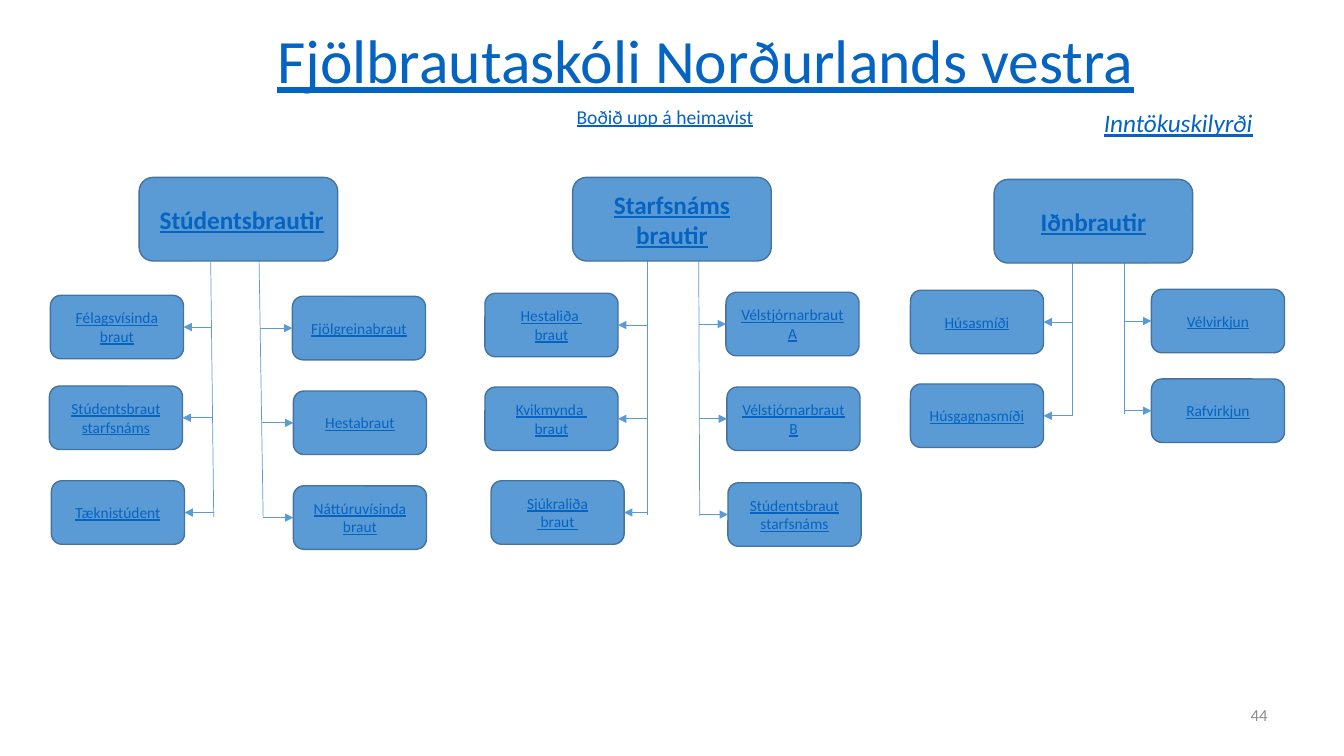
"""Build the slide of study programmes at Fjölbrautaskóli Norðurlands vestra."""
from pptx import Presentation
from pptx.dml.color import RGBColor
from pptx.enum import shapes, text
from pptx.oxml import ns, xmlchemy
from pptx.util import Inches, Pt

LINK = RGBColor(0x05, 0x63, 0xC1)
BLUE = RGBColor(0x5B, 0x9B, 0xD5)
EDGE = RGBColor(0x43, 0x73, 0x9E)
GREY = RGBColor(0x8C, 0x8C, 0x8C)
LEFT, CENTER, RIGHT = text.PP_ALIGN.LEFT, text.PP_ALIGN.CENTER, text.PP_ALIGN.RIGHT
TOP, MIDDLE = text.MSO_ANCHOR.TOP, text.MSO_ANCHOR.MIDDLE
BOX_W, BOX_H = 1.32, 0.63
HEAD_W, HEAD_H = 1.97, 0.83

prs = Presentation()
prs.slide_width, prs.slide_height = Inches(13.33), Inches(7.5)
s = prs.slides.add_slide(prs.slide_layouts[6])


def write(sp, words, size, align=CENTER, anchor=MIDDLE, color=LINK,
          underline=True, bold=False, italic=False, spacing=1.0):
    tf = sp.text_frame
    tf.word_wrap = True
    tf.vertical_anchor = anchor
    tf.text = words
    for p in tf.paragraphs:
        p.alignment = align
        p.line_spacing = spacing
        p.font.name, p.font.size, p.font.color.rgb = "Calibri", Pt(size), color
        p.font.underline, p.font.bold, p.font.italic = underline, bold, italic


def add_line(x1, y1, x2, y2):
    line = s.shapes.add_connector(
        shapes.MSO_CONNECTOR.STRAIGHT, Inches(x1), Inches(y1), Inches(x2), Inches(y2))
    line.line.color.rgb, line.line.width = BLUE, Pt(0.5)
    line._element.spPr.append(xmlchemy.OxmlElement("a:effectLst"))
    return line


labels = [
    (2.65, 0.21, 8.86, 0.85, "Fjölbrautaskóli Norðurlands vestra", 44,
     dict(align=LEFT, spacing=0.9)),
    (5.62, 0.99, 2.12, 0.34, "Boðið upp á heimavist", 14, dict(align=LEFT, anchor=TOP)),
    (10.85, 1.02, 2.2, 0.4, "Inntökuskilyrði", 18,
     dict(align=LEFT, anchor=TOP, italic=True)),
    (9.56, 6.83, 3.11, 0.52, "44", 12, dict(align=RIGHT, color=GREY, underline=False)),
]
for x, y, w, h, words, size, style in labels:
    write(s.shapes.add_textbox(Inches(x), Inches(y), Inches(w), Inches(h)),
          words, size, **style)

heads = [
    (1.38, 1.76, "Stúdentsbrautir", RIGHT),
    (5.68, 1.76, "Starfsnáms\nbrautir", CENTER),
    (9.86, 1.78, "Iðnbrautir", CENTER),
]
branches = [
    ((2.09, 2.6, 2.12, 5.13), [
        (0.5, 2.93, "Félagsvísinda\nbraut"),
        (0.49, 3.83, "Stúdentsbraut starfsnáms"),
        (0.51, 4.77, "Tæknistúdent")]),
    ((2.57, 2.59, 2.61, 5.13), [
        (2.9, 2.94, "Fjölgreinabraut"),
        (2.91, 3.88, "Hestabraut"),
        (2.91, 4.82, "Náttúruvísinda braut")]),
    ((6.42, 2.58, 6.42, 5.11), [
        (4.81, 2.91, "Hestaliða \nbraut"),
        (4.81, 3.84, "Kvikmynda \nbraut"),
        (4.87, 4.77, "Sjúkraliða\n braut ")]),
    ((6.93, 2.58, 6.94, 5.12), [
        (7.2, 2.9, "Vélstjórnarbraut A"),
        (7.21, 3.84, "Vélstjórnarbraut B"),
        (7.22, 4.79, "Stúdentsbraut starfsnáms")]),
    ((10.64, 2.61, 10.64, 4.12), [
        (9.03, 2.88, "Húsasmíði"),
        (9.03, 3.81, "Húsgagnasmíði")]),
    ((11.15, 2.55, 11.15, 4.11), [
        (11.42, 2.87, "Vélvirkjun"),
        (11.42, 3.76, "Rafvirkjun")]),
]

boxes = [(x, y, HEAD_W, HEAD_H, words, 18, align, True, None)
         for x, y, words, align in heads]
for trunk, programmes in branches:
    add_line(*trunk)
    boxes += [(x, y, BOX_W, BOX_H, words, 11, CENTER, False, trunk)
              for x, y, words in programmes]

for x, y, w, h, words, size, align, bold, trunk in boxes:
    sp = s.shapes.add_shape(shapes.MSO_SHAPE.ROUNDED_RECTANGLE,
                            Inches(x), Inches(y), Inches(w), Inches(h))
    sp.shadow.inherit = False
    sp.fill.solid()
    sp.fill.fore_color.rgb = BLUE
    sp.line.color.rgb, sp.line.width = EDGE, Pt(1)
    write(sp, words, size, align=align, bold=bold)
    if trunk:
        x1, y1, x2, y2 = trunk
        mid = y + h / 2
        start = x1 + (x2 - x1) * (mid - y1) / (y2 - y1)
        on_left = x < start
        arrow = add_line(start, mid, x + w if on_left else x, mid)
        arrow.end_connect(sp, 3 if on_left else 1)
        tail = xmlchemy.OxmlElement("a:tailEnd")
        tail.set("type", "triangle")
        arrow._element.spPr.find(ns.qn("a:ln")).append(tail)

prs.save("out.pptx")
